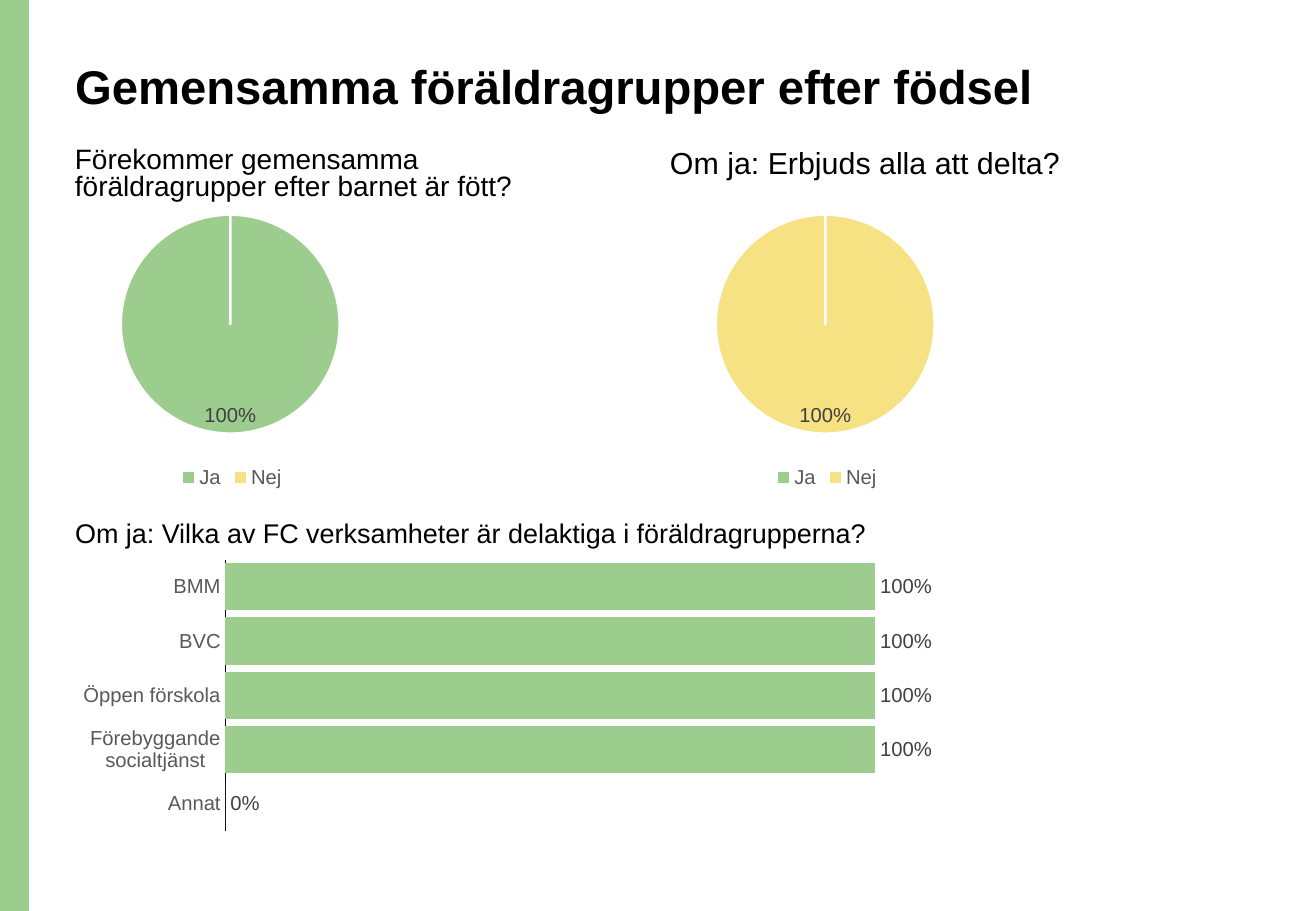
from lxml import etree
from pptx import Presentation
from pptx import util as u
from pptx.chart.data import CategoryChartData
from pptx.dml.color import RGBColor
from pptx.enum import chart as ch, shapes, text
from pptx.oxml import parse_xml
from pptx.oxml.ns import nsdecls, qn

PX = 7526  # EMU per px
GREEN, YELLOW, BLACK, WHITE = "9DCC8F", "F6E183", "000000", "FFFFFF"
LABEL, AXIS = "404040", "595959"


def write(sp, words, box, size, spacing=0.9, bold=False):
    sp.left, sp.top, sp.width, sp.height = [v * PX for v in box]
    tf = sp.text_frame
    tf.word_wrap = True
    tf.auto_size = text.MSO_AUTO_SIZE.NONE
    tf.vertical_anchor = text.MSO_ANCHOR.TOP
    p = tf.paragraphs[0]
    p.alignment = text.PP_ALIGN.LEFT
    p.line_spacing, p.space_before = spacing, u.Pt(0)
    pPr = p._p.get_or_add_pPr()
    pPr.set("marL", "0")
    pPr.set("indent", "0")
    etree.SubElement(pPr, qn("a:buNone"))
    r = p.add_run()
    r.text = words
    style(r.font, size, BLACK)
    r.font.bold = bold


def style(font, size, color):
    font.name, font.size = "Arial", u.Pt(size)
    font.color.rgb = RGBColor.from_string(color)


prs = Presentation()
prs.slide_width, prs.slide_height = 1316 * PX, 911 * PX
s = prs.slides.add_slide(prs.slide_layouts[1])

band = s.shapes.add_shape(shapes.MSO_SHAPE.RECTANGLE, 0, 0, 29 * PX, 911 * PX)
band.shadow.inherit = False
band.fill.solid()
band.fill.fore_color.rgb = RGBColor.from_string(GREEN)
band.line.fill.background()

write(s.shapes.title, "Gemensamma föräldragrupper efter födsel",
      (63, 58, 1135, 124), 28, bold=True)
write(s.placeholders[1],
      "Om ja: Vilka av FC verksamheter är delaktiga i föräldragrupperna?",
      (63, 514, 988, 77), 16)
for left, words, size, spacing in [
    (63, "Förekommer gemensamma föräldragrupper efter barnet är fött?", 16.6, 0.8),
    (658, "Om ja: Erbjuds alla att delta?", 18, 0.9),
]:
    write(s.shapes.add_textbox(0, 0, 0, 0), words, (left, 142, 502, 69), size, spacing)

PIE, BAR = ch.XL_CHART_TYPE.PIE, ch.XL_CHART_TYPE.BAR_CLUSTERED
answers = ["Ja", "Nej"]
services = ["BMM", "BVC", "Öppen förskola", "Förebyggande socialtjänst", "Annat"]
pie_plot, bar_plot = (0.17, 0.06, 0.65, 0.74), (0.17, 0.02, 0.68, 0.96)

for kind, box, plot_area, cats, vals in [
    (PIE, (63, 197, 338, 296), pie_plot, answers, (1, 0)),
    (PIE, (658, 197, 338, 296), pie_plot, answers, (0, 1)),
    (BAR, (63, 554, 956, 283), bar_plot, services, (1, 1, 1, 1, 0)),
]:
    data = CategoryChartData(number_format="0%")
    data.categories = cats
    data.add_series("Series 1", vals)
    chart = s.shapes.add_chart(kind, *[v * PX for v in box], data).chart
    chart.has_title = False
    style(chart.font, 10, BLACK)
    plot = chart.plots[0]
    series = plot.series[0]

    plot.has_data_labels = True
    labels = plot.data_labels
    labels.show_value = True
    labels.number_format_is_linked = False
    style(labels.font, 12, LABEL)

    area = chart._chartSpace.chart.plotArea
    for old in area.findall(qn("c:layout")):
        area.remove(old)
    sizes = "".join(f'<c:{k} val="{v}"/>' for k, v in zip("xywh", plot_area))
    area.insert(0, parse_xml(
        f'<c:layout {nsdecls("c")}><c:manualLayout><c:layoutTarget val="inner"/>'
        f'<c:xMode val="edge"/><c:yMode val="edge"/>{sizes}</c:manualLayout></c:layout>'))

    if kind == PIE:
        plot.vary_by_categories = True
        labels.number_format = "0%;;"  # no label on an empty slice
        labels.position = ch.XL_LABEL_POSITION.INSIDE_END
        for i, color in enumerate((GREEN, YELLOW)):
            fmt = series.points[i].format
            fmt.fill.solid()
            fmt.fill.fore_color.rgb = RGBColor.from_string(color)
            fmt.line.color.rgb = RGBColor.from_string(WHITE)
            fmt.line.width = u.Pt(1.5)
        chart.has_legend = True
        chart.legend.position = ch.XL_LEGEND_POSITION.BOTTOM
        chart.legend.include_in_layout = False
        style(chart.legend.font, 12, AXIS)
    else:
        chart.has_legend = False
        plot.vary_by_categories = False
        plot.gap_width = 15
        labels.number_format = "0%"
        labels.position = ch.XL_LABEL_POSITION.OUTSIDE_END
        series.format.fill.solid()
        series.format.fill.fore_color.rgb = RGBColor.from_string(GREEN)
        axis = chart.category_axis
        axis.reverse_order = True
        axis.major_tick_mark = ch.XL_TICK_MARK.NONE
        axis.format.line.color.rgb = RGBColor.from_string(BLACK)
        axis.format.line.width = u.Pt(0.75)
        style(axis.tick_labels.font, 12, AXIS)
        scale = chart.value_axis
        scale.minimum_scale, scale.maximum_scale = 0, 1
        scale.has_major_gridlines = False
        scale.visible = False

prs.save("out.pptx")
